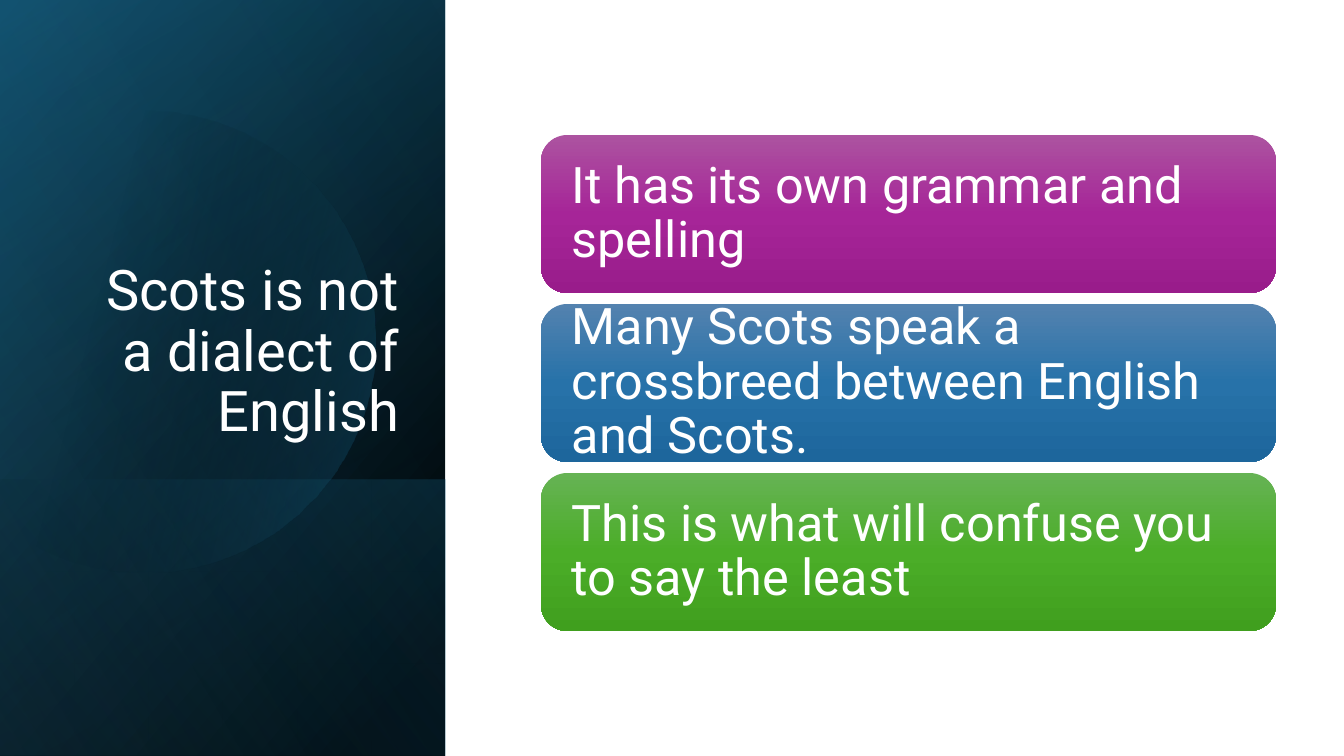
import math

import pptx
import pptx.dml.color
import pptx.enum.shapes
import pptx.enum.text
import pptx.oxml
import pptx.oxml.ns
import pptx.util

SCALE = 914400 / 100.8  # EMU in one px
WIDE, HIGH, SIDE = 1344, 756, 445
FONT = "Roboto"
HEX = {
    "white": "FFFFFF", "black": "000000", "navy": "104862",
    "teal": "156082", "sky": "46B1E1",
}
# Panel layers: top, height, gradient angle, stops (place, colour, alpha)
BASE = [
    (0, HIGH, 50, [(8, HEX["black"], 100), (100, HEX["navy"], 100)]),
    (0, HIGH, 30, [(0, HEX["black"], 0), (99, HEX["teal"], 46)]),
    (480, HIGH - 480, 130, [(2, HEX["teal"], 29), (100, HEX["black"], 30)]),
]
GLOW = (0, HIGH, 120, [(0, HEX["black"], 0), (99, HEX["sky"], 11)])
DISC = [(29, HEX["black"], 0), (100, HEX["teal"], 43)]
# Cards: text and colours from top to bottom
CARDS = [
    ("It has its own grammar and spelling", ("AC53A0", "A62598", "991C8B")),
    ("Many Scots speak a crossbreed between English and Scots.",
     ("5382AF", "2772A9", "1D669C")),
    ("This is what will confuse you to say the least",
     ("66B354", "4BAD28", "409F1E")),
]


def px(num):
    return pptx.util.Emu(round(num * SCALE))


def apply(item, **vals):
    for key, val in vals.items():
        setattr(item, key, val)


def shade(shape, angle, stops):
    """Give a shape a linear gradient and no outline."""
    marks = "".join(
        f'<a:gs pos="{place * 1000}"><a:srgbClr val="{tone}">'
        f'<a:alpha val="{alpha * 1000}"/></a:srgbClr></a:gs>'
        for place, tone, alpha in stops)
    grad = pptx.oxml.parse_xml(
        f'<a:gradFill {pptx.oxml.ns.nsdecls("a")} rotWithShape="1">'
        f'<a:gsLst>{marks}</a:gsLst>'
        f'<a:lin ang="{angle * 60000}" scaled="0"/></a:gradFill>')
    shape.element.spPr.insert(2, grad)
    shape.line.fill.background()
    shape.shadow.inherit = False


def write(shape, text, size, align, **frame):
    box = shape.text_frame
    box.text = text
    apply(box, word_wrap=True, auto_size=pptx.enum.text.MSO_AUTO_SIZE.NONE,
          **frame)
    para = box.paragraphs[0]
    apply(para, alignment=align, line_spacing=0.9)
    apply(para.font, name=FONT, size=pptx.util.Pt(size))
    para.font.color.rgb = pptx.dml.color.RGBColor.from_string(HEX["white"])


def add_layer(slide, top, high, angle, stops):
    """Add a turned and flipped rectangle as wide as the side panel."""
    left, drop = (SIDE - high) / 2, top + (high - SIDE) / 2
    kind = pptx.enum.shapes.MSO_SHAPE.RECTANGLE
    layer = slide.shapes.add_shape(kind, px(left), px(drop), px(high), px(SIDE))
    layer.rotation = 90
    layer.element.spPr.xfrm.set("flipH", "1")
    shade(layer, angle, stops)


def add_disc(slide, mid_x, mid_y, radius):
    """Add a circle cut off at the left edge of the slide."""
    rim = [(mid_x + radius * math.cos(math.radians(turn)),
            mid_y + radius * math.sin(math.radians(turn)))
           for turn in range(-128, 129, 2)]
    form = slide.shapes.build_freeform(*rim[0], scale=SCALE)
    form.add_line_segments(rim[1:], close=True)
    shade(form.convert_to_shape(), 14, DISC)


def add_title(slide, text):
    title = slide.shapes.title
    apply(title, left=px(65), top=px(185), width=px(344), height=px(264))
    write(title, text, 40, pptx.enum.text.PP_ALIGN.RIGHT,
          vertical_anchor=pptx.enum.text.MSO_ANCHOR.BOTTOM)
    slide.shapes.element.append(title.element)  # above the panel


def add_card(slide, row, text, tones):
    kind = pptx.enum.shapes.MSO_SHAPE.ROUNDED_RECTANGLE
    card = slide.shapes.add_shape(
        kind, px(541), px(135 + row * 169), px(735), px(158))
    shade(card, 90, [(50 * step, tone, 100) for step, tone in enumerate(tones)])
    write(card, text, 36, pptx.enum.text.PP_ALIGN.LEFT,
          vertical_anchor=pptx.enum.text.MSO_ANCHOR.MIDDLE,
          margin_left=px(23), margin_right=px(23),
          margin_top=0, margin_bottom=0)


def main():
    deck = pptx.Presentation()
    apply(deck, slide_width=px(WIDE), slide_height=px(HIGH))
    slide = deck.slides.add_slide(deck.slide_layouts[5])
    # Side panel
    for layer in BASE:
        add_layer(slide, *layer)
    add_disc(slide, 144, 342, 231)
    add_layer(slide, *GLOW)
    add_title(slide, "Scots is not a dialect of English")
    # Cards
    for row, (text, tones) in enumerate(CARDS):
        add_card(slide, row, text, tones)
    deck.save("out.pptx")


if __name__ == "__main__":
    main()
